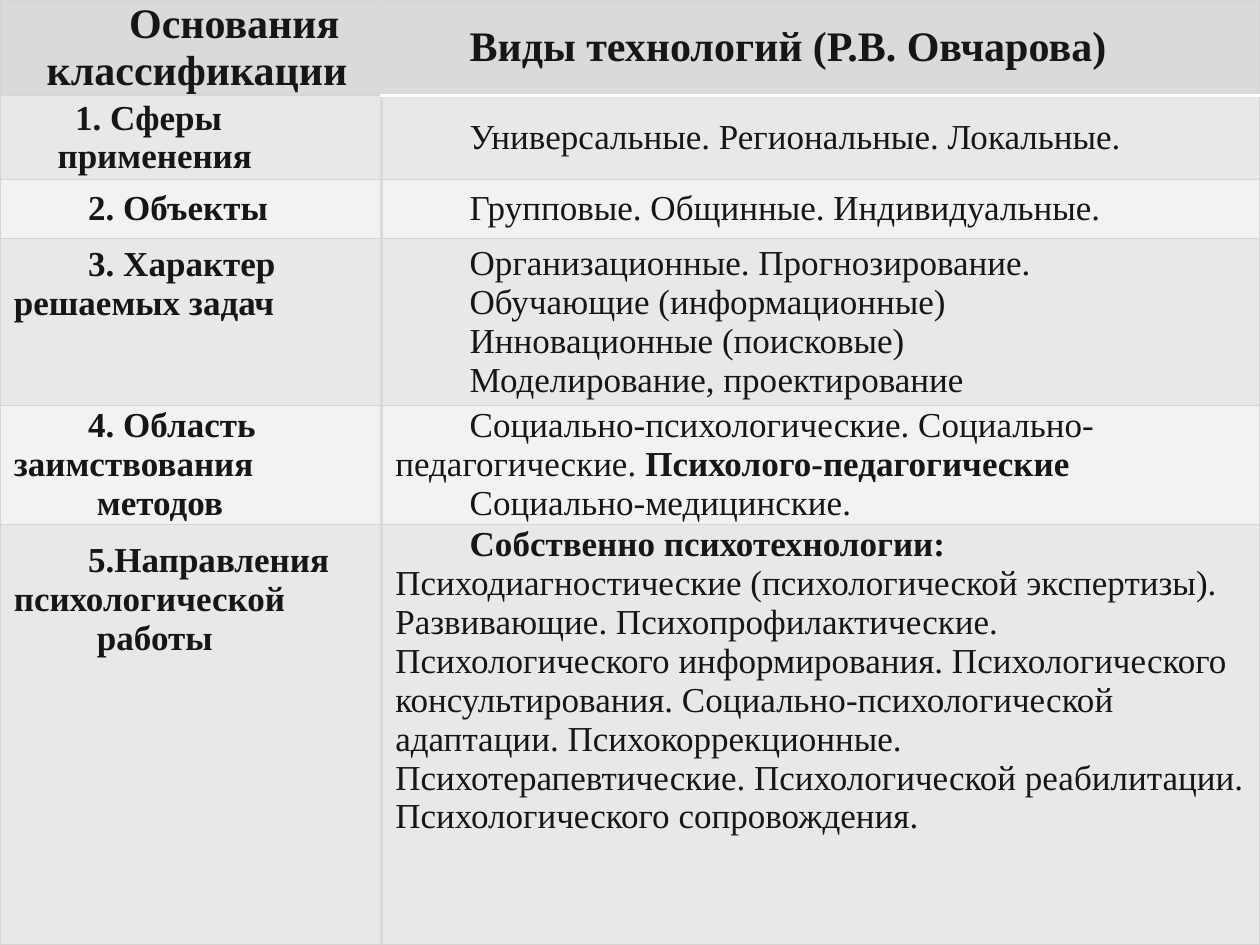
from lxml import etree
from pptx import Presentation
from pptx.dml.color import RGBColor
from pptx.enum import text
from pptx.oxml import ns
from pptx.util import Pt

COLORS = {
    "background": "008080",
    "header": "DADADA",
    "odd": "E8E8E8",
    "even": "F2F2F2",
    "text": "161616",
    "rule": "D5D5D5",
    "divider": "DADADA",
    "header_rule": "FFFFFF",
}
FONT = "Times New Roman"
INSET = 0.72
LEFT_MARGIN = 7.2
INDENT = 42.5
COLUMN_WIDTHS = [218, 502]
ROW_HEIGHTS = [54.6, 48, 33.7, 95.4, 68, 240.3]
TOP_INSETS = {(3, 0): 3.7, (5, 0): 9.7, (5, 1): INSET}

ROWS = [
    (["Основания классификации"], ["Виды технологий (Р.В. Овчарова)"]),
    ([(35, "1. Сферы"), (25, "применения")],
     ["Универсальные. Региональные. Локальные."]),
    (["2. Объекты"], ["Групповые. Общинные. Индивидуальные."]),
    (["3. Характер решаемых задач"],
     ["Организационные. Прогнозирование.",
      "Обучающие (информационные)",
      "Инновационные (поисковые)",
      "Моделирование, проектирование"]),
    (["4. Область заимствования", (47.5, "методов")],
     [[("Социально-психологические. Социально-педагогические. ", False),
       ("Психолого-педагогические", True)],
      "Социально-медицинские."]),
    (["5.Направления психологической", (47.5, "работы")],
     [[("Собственно психотехнологии: ", True),
       ("Психодиагностические (психологической экспертизы). Развивающие. "
        "Психопрофилактические. Психологического информирования. "
        "Психологического консультирования. Социально-психологической "
        "адаптации. Психокоррекционные. Психотерапевтические. "
        "Психологической реабилитации. Психологического сопровождения.", False)]]),
]


def rgb(name):
    return RGBColor.from_string(COLORS[name])


def add_border(cell, side, color, width):
    properties = cell._tc.get_or_add_tcPr()
    line = etree.SubElement(properties, ns.qn(f"a:ln{side}"), w=str(Pt(width)))
    fill = etree.SubElement(line, ns.qn("a:solidFill"))
    etree.SubElement(fill, ns.qn("a:srgbClr"), val=COLORS[color])


def style_cell(cell, row, column):
    rule, divider, header_rule = ("rule", 0.75), ("divider", 2), ("header_rule", 2)
    borders = {
        "L": divider if column == 1 else rule,
        "R": divider if column == 0 else rule,
        "T": header_rule if (row, column) == (1, 1) else rule,
        "B": header_rule if (row, column) == (0, 1) else rule,
    }
    for side, (color, width) in borders.items():
        add_border(cell, side, color, width)
    cell.fill.solid()
    cell.fill.fore_color.rgb = rgb("header" if row == 0 else "odd" if row % 2 else "even")
    cell.margin_left = cell.margin_right = cell.margin_bottom = Pt(INSET)
    cell.margin_top = Pt(TOP_INSETS.get((row, column), INSET))
    top = (row, column) in TOP_INSETS
    cell.vertical_anchor = text.MSO_ANCHOR.TOP if top else text.MSO_ANCHOR.MIDDLE


def write_paragraph(paragraph, content, size, bold):
    indent = INDENT
    if isinstance(content, tuple):
        indent, content = content
    properties = paragraph._p.get_or_add_pPr()
    properties.set("marL", str(Pt(LEFT_MARGIN)))
    properties.set("indent", str(Pt(indent)))
    font = paragraph.font
    font.name, font.size, font.bold = FONT, Pt(size), bold
    font.color.rgb = rgb("text")
    runs = [(content, bold)] if isinstance(content, str) else content
    for words, run_bold in runs:
        run = paragraph.add_run()
        run.text = words
        if len(runs) > 1:
            run.font.bold = run_bold


def add_classification_table(slide, left, top, width, height):
    frame = slide.shapes.add_table(len(ROWS), len(COLUMN_WIDTHS),
                                   Pt(left), Pt(top), Pt(width), Pt(height))
    table = frame.table
    table.first_row = table.horz_banding = False
    for column, column_width in zip(table.columns, COLUMN_WIDTHS):
        column.width = Pt(column_width)
    for row, row_height in zip(table.rows, ROW_HEIGHTS):
        row.height = Pt(row_height)
    for row, contents in enumerate(ROWS):
        for column, paragraphs in enumerate(contents):
            cell = table.cell(row, column)
            style_cell(cell, row, column)
            text_frame = cell.text_frame
            for index, content in enumerate(paragraphs):
                paragraph = text_frame.add_paragraph() if index else text_frame.paragraphs[0]
                write_paragraph(paragraph, content, 20 if row else 24,
                                row == 0 or column == 0)
    table.cell(0, 0).text_frame.paragraphs[0].alignment = text.PP_ALIGN.CENTER


def main():
    presentation = Presentation()
    presentation.slide_width, presentation.slide_height = Pt(720), Pt(540)
    slide = presentation.slides.add_slide(presentation.slide_layouts[6])
    slide.background.fill.solid()
    slide.background.fill.fore_color.rgb = rgb("background")
    add_classification_table(slide, 0, 0, sum(COLUMN_WIDTHS), sum(ROW_HEIGHTS))
    presentation.save("out.pptx")


if __name__ == "__main__":
    main()
